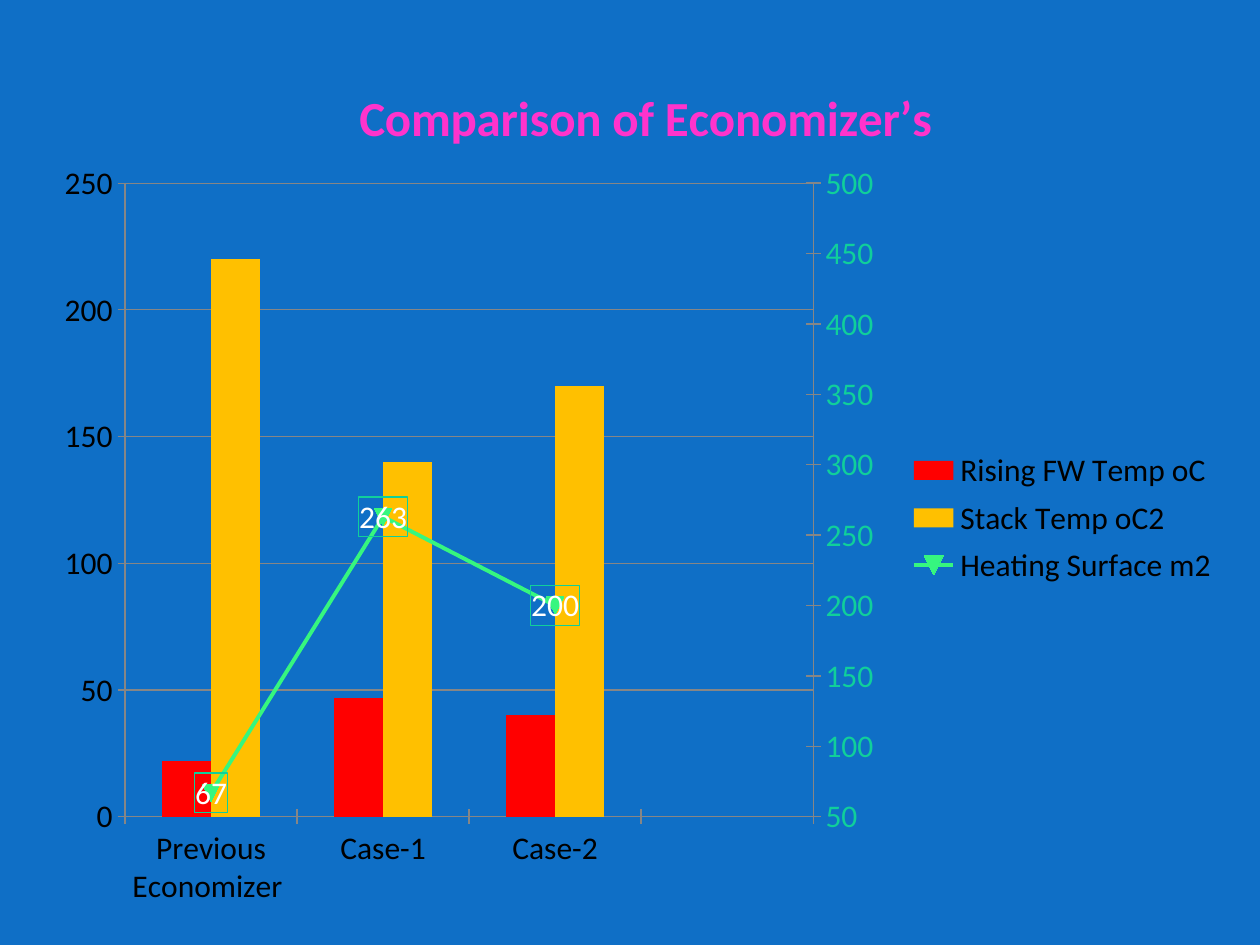
from copy import deepcopy
from lxml.etree import SubElement as Sub
from pptx import Presentation
from pptx.chart.axis import CategoryAxis as CatAxis, ValueAxis as ValAxis
from pptx.chart.data import CategoryChartData as Data
from pptx.dml.color import RGBColor
from pptx.enum.chart import (XL_CHART_TYPE as Kind, XL_LABEL_POSITION as Spot,
                             XL_LEGEND_POSITION as Side, XL_TICK_MARK as Tick)
from pptx.oxml import parse_xml
from pptx.oxml.ns import nsdecls, qn
from pptx.util import Pt

TITLE = "Comparison of Economizer’s"
CATS = ["Previous Economizer ", "Case-1", "Case-2", ""]
SERIES = [
    ("Rising FW Temp oC", [22, 47, 40, None], "FF0000"),
    ("Stack Temp oC2", [220, 140, 170, None], "FFC000"),
    ("Heating Surface m2", [67, 263, 200, None], "36F67F"),
]
BLUE, GRAY, MINT = "0F6FC6", "868686", "10CF9B"
BOX = [Pt(n) for n in (24, 18, 678, 510)]
LEFT = {"minimum_scale": 0, "maximum_scale": 250, "major_unit": 50}
RIGHT = {"minimum_scale": 50, "maximum_scale": 500, "major_unit": 50,
         "has_major_gridlines": False}
LABELS = {"show_value": True, "position": Spot.CENTER}
LEGEND = {"position": Side.RIGHT, "include_in_layout": False}


def put(obj, vals):
    for key, val in vals.items():
        setattr(obj, key, val)


def rgb(code):
    return RGBColor.from_string(code)


def paint(fill, code):
    fill.solid()
    fill.fore_color.rgb = rgb(code)


def stroke(line, code, width):
    line.color.rgb = rgb(code)
    line.width = Pt(width)


def type_up(font, size, code, bold=False):
    put(font, {"name": "Calibri", "size": Pt(size), "bold": bold})
    font.color.rgb = rgb(code)


def props(fill, line=None):
    body = f'<a:solidFill><a:srgbClr val="{fill}"/></a:solidFill>' if fill else "<a:noFill/>"
    edge = f'<a:solidFill><a:srgbClr val="{line}"/></a:solidFill>' if line else "<a:noFill/>"
    return parse_xml(f'<c:spPr {nsdecls("c", "a")}>{body}<a:ln w="9525">{edge}</a:ln></c:spPr>')


def layout(inner=False, **place):
    root = parse_xml(f'<c:layout {nsdecls("c")}><c:manualLayout/></c:layout>')
    if inner:
        Sub(root[0], qn("c:layoutTarget"), val="inner")
    for key in "xy":
        Sub(root[0], qn(f"c:{key}Mode"), val="edge")
    for key, val in place.items():
        Sub(root[0], qn(f"c:{key}"), val=str(val))
    return root


def place_at(node, before, spot):
    for old in node.findall(qn("c:layout")):
        node.remove(old)
    node.find(qn(before)).addprevious(spot)


def add_right(chart):
    area = chart.plots[0]._element.getparent()
    bars = area.find(qn("c:barChart"))
    ser = bars.findall(qn("c:ser"))[-1]
    flag = ser.find(qn("c:invertIfNegative"))
    if flag is not None:
        ser.remove(flag)
    line = parse_xml(f'<c:lineChart {nsdecls("c")}><c:grouping val="standard"/>'
                     '<c:varyColors val="0"/><c:marker val="1"/>'
                     '<c:axId val="501"/><c:axId val="502"/></c:lineChart>')
    line[1].addnext(ser)
    bars.addnext(line)
    cat, val = (deepcopy(area.find(qn(tag))) for tag in ("c:catAx", "c:valAx"))
    for axis, own, cross in ((val, "502", "501"), (cat, "501", "502")):
        axis.find(qn("c:axId")).set("val", own)
        axis.find(qn("c:crossAx")).set("val", cross)
        area.findall(qn("c:valAx"))[-1].addnext(axis)
    val.find(qn("c:axPos")).set("val", "r")
    val.find(qn("c:crosses")).set("val", "max")
    CatAxis(cat).visible = False
    right = ValAxis(val)
    put(right, RIGHT)
    type_up(right.tick_labels.font, 18, MINT)
    area.append(props(BLUE))
    place_at(area, "c:barChart", layout(True, x=0.07, y=0.17, w=0.58, h=0.71))


def main():
    deck = Presentation()
    put(deck, {"slide_width": Pt(720), "slide_height": Pt(540)})
    slide = deck.slides.add_slide(deck.slide_layouts[6])
    paint(slide.background.fill, BLUE)

    data = Data()
    data.categories = CATS
    for name, vals, _ in SERIES:
        data.add_series(name, vals)
    chart = slide.shapes.add_chart(Kind.COLUMN_CLUSTERED, *BOX, data).chart
    type_up(chart.font, 18, "000000")
    chart._chartSpace.find(qn("c:chart")).addnext(props(None))

    chart.has_title = True
    text = chart.chart_title.text_frame
    text.text = TITLE
    type_up(text.paragraphs[0].runs[0].font, 28, "FF33CC", True)
    chart.chart_title.include_in_layout = False
    place_at(chart.chart_title._element, "c:overlay", layout(x=0.26, y=0.05))

    chart.has_legend = True
    put(chart.legend, LEGEND)
    type_up(chart.legend.font, 18, "000000")
    place_at(chart.legend._element, "c:overlay", layout(x=0.73, y=0.46, w=0.26, h=0.17))

    put(chart.value_axis, LEFT)
    for axis in (chart.category_axis, chart.value_axis):
        put(axis, {"major_tick_mark": Tick.CROSS, "minor_tick_mark": Tick.NONE})
        type_up(axis.tick_labels.font, 18, "000000")
        stroke(axis.format.line, GRAY, 0.75)
    stroke(chart.value_axis.major_gridlines.format.line, GRAY, 0.75)
    put(chart.plots[0], {"gap_width": 150, "overlap": 0, "vary_by_categories": False})
    add_right(chart)

    bars, line = chart.plots
    for ser, (_, _, code) in zip(bars.series, SERIES):
        paint(ser.format.fill, code)
    heat, code = line.series[0], SERIES[-1][2]
    heat.smooth = False
    stroke(heat.format.line, code, 2.25)
    heat.marker.size = 10
    paint(heat.marker.format.fill, code)
    stroke(heat.marker.format.line, code, 0.75)
    put(heat.data_labels, LABELS)
    type_up(heat.data_labels.font, 18, "FFFFFF")
    heat.data_labels._element.find(qn("c:txPr")).addprevious(props(None, MINT))
    deck.save("out.pptx")


if __name__ == "__main__":
    main()
